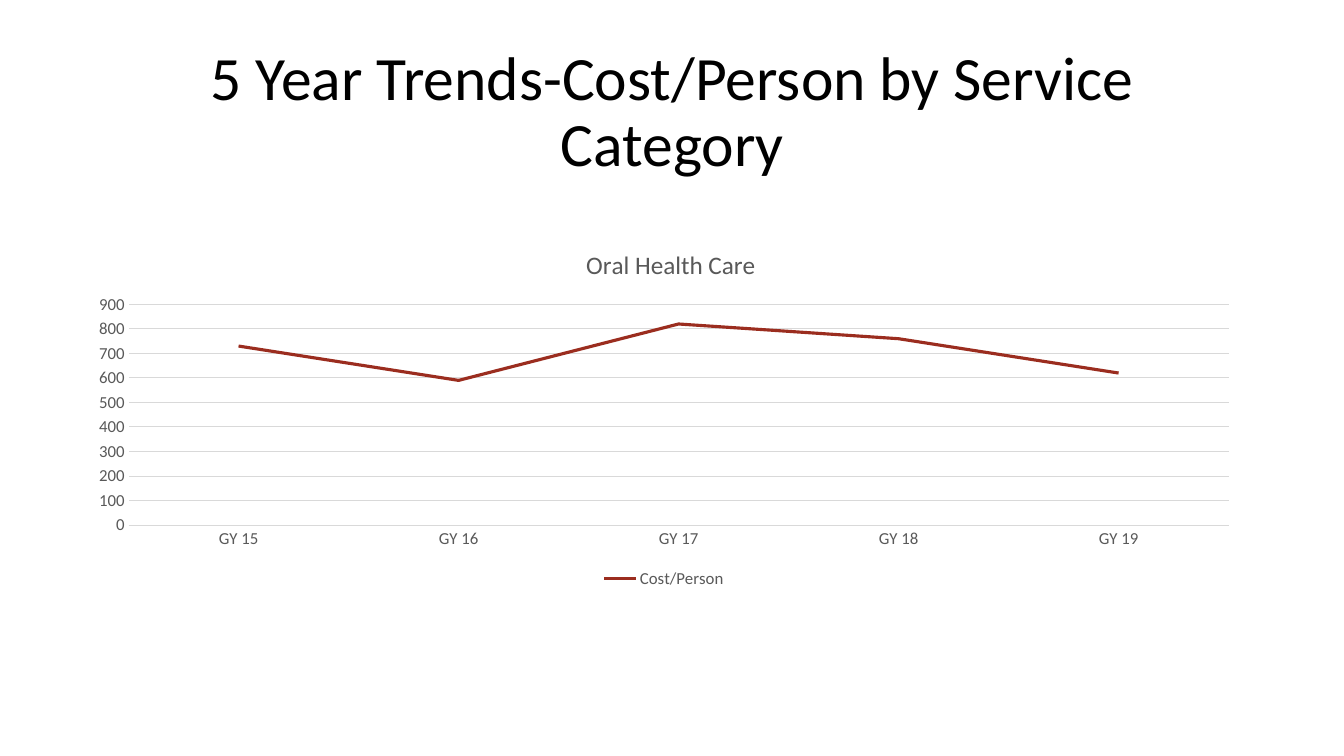
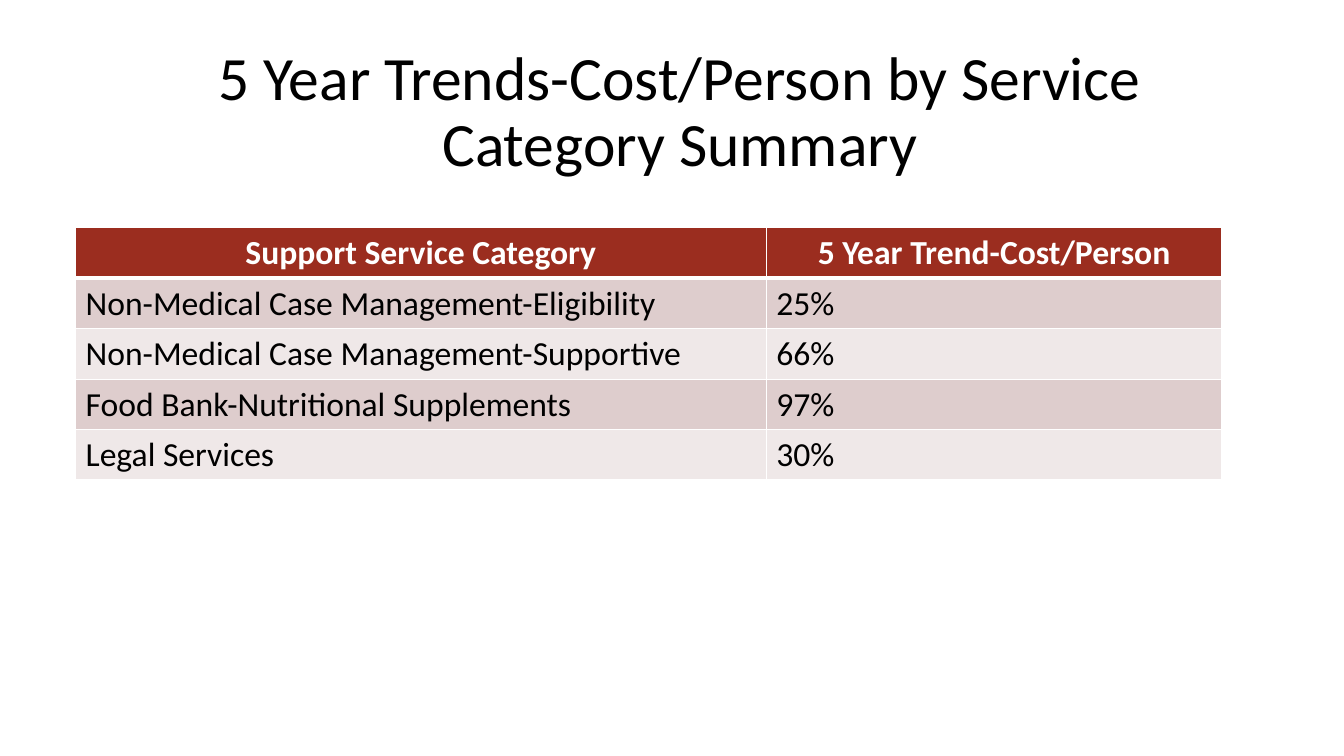
from dataclasses import dataclass

from lxml import etree
from pptx import Presentation
from pptx.chart.data import CategoryChartData
from pptx.dml.color import RGBColor
from pptx.enum.chart import XL_CHART_TYPE, XL_LEGEND_POSITION, XL_TICK_MARK
from pptx.enum.text import MSO_ANCHOR, PP_ALIGN
from pptx.oxml import parse_xml
from pptx.oxml.ns import nsdecls, qn
from pptx.util import Inches, Pt

LINE_CHART = XL_CHART_TYPE.LINE
LEGEND_BOTTOM = XL_LEGEND_POSITION.BOTTOM
NO_TICK = XL_TICK_MARK.NONE
MIDDLE = MSO_ANCHOR.MIDDLE
CENTER, LEFT = PP_ALIGN.CENTER, PP_ALIGN.LEFT


@dataclass(frozen=True)
class Theme:
    font: str = "Calibri"
    black: str = "000000"
    white: str = "FFFFFF"
    accent: str = "9B2D1F"
    bands: tuple = ("DECDCD", "EFE8E8")
    gray: str = "595959"
    grid: str = "D9D9D9"
    title_size: float = 44
    table_size: float = 24
    chart_title_size: float = 18
    chart_size: float = 12


THEME = Theme()


def rgb(color):
    return RGBColor.from_string(color)


def style_font(font, size, color, bold=False):
    font.name = THEME.font
    font.size = Pt(size)
    font.bold = bold
    font.color.rgb = rgb(color)


def style_line(line, color, width):
    line.color.rgb = rgb(color)
    line.width = Pt(width)


def add_title(slide, text, box):
    tf = slide.shapes.add_textbox(*map(Inches, box)).text_frame
    tf.word_wrap = True
    tf.vertical_anchor = MIDDLE
    p = tf.paragraphs[0]
    p.text = text
    p.alignment = CENTER
    p.line_spacing = 0.9
    style_font(p.runs[0].font, THEME.title_size, THEME.black)


def set_layout(parent, index, inner=False, **fractions):
    """Place a chart part by fractions of the chart's box."""
    for old in parent.findall(qn("c:layout")):
        parent.remove(old)
    layout = parse_xml(f"<c:layout {nsdecls('c')}><c:manualLayout/></c:layout>")
    settings = {"layoutTarget": "inner"} if inner else {}
    settings.update(xMode="edge", yMode="edge", **fractions)
    for name, value in settings.items():
        etree.SubElement(layout[0], qn(f"c:{name}")).set("val", str(value))
    parent.insert(index, layout)


def add_trend_chart(slide, heading, series_name, values, box):
    data = CategoryChartData()
    data.categories = values.keys()
    data.add_series(series_name, values.values())
    chart = slide.shapes.add_chart(LINE_CHART, *map(Inches, box), data).chart
    style_font(chart.font, THEME.chart_size, THEME.gray)

    chart.has_title = True
    p = chart.chart_title.text_frame.paragraphs[0]
    p.text = heading
    style_font(p.runs[0].font, THEME.chart_title_size, THEME.gray)
    space = chart._chartSpace
    set_layout(space.find(".//" + qn("c:title")), 1, x=0.43, y=0.04)
    set_layout(space.find(".//" + qn("c:plotArea")), 0, inner=True,
               x=0.045, y=0.21, w=0.935, h=0.605)

    chart.has_legend = True
    chart.legend.position = LEGEND_BOTTOM
    chart.legend.include_in_layout = False
    style_font(chart.legend.font, THEME.chart_size, THEME.gray)

    for axis in (chart.category_axis, chart.value_axis):
        axis.major_tick_mark = axis.minor_tick_mark = NO_TICK
        style_font(axis.tick_labels.font, THEME.chart_size, THEME.gray)
    style_line(chart.category_axis.format.line, THEME.grid, 0.75)
    value_axis = chart.value_axis
    value_axis.minimum_scale, value_axis.maximum_scale = 0, 900
    value_axis.major_unit = 100
    value_axis.format.line.fill.background()
    style_line(value_axis.major_gridlines.format.line, THEME.grid, 0.75)

    plot = chart.plots[0]
    plot.vary_by_categories = False
    series = plot.series[0]
    series.smooth = False
    style_line(series.format.line, THEME.accent, 2.25)


def set_borders(cell, bottom):
    tc_pr = cell._tc.get_or_add_tcPr()
    for side, width in (("L", 1), ("R", 1), ("T", 1), ("B", bottom)):
        tc_pr.append(parse_xml(
            f'<a:ln{side} {nsdecls("a")} w="{Pt(width)}"><a:solidFill>'
            f'<a:srgbClr val="{THEME.white}"/></a:solidFill></a:ln{side}>'))


def fill_cell(cell, text, fill, color, header):
    set_borders(cell, bottom=3 if header else 1)
    cell.fill.solid()
    cell.fill.fore_color.rgb = rgb(fill)
    p = cell.text_frame.paragraphs[0]
    p.text = text
    p.alignment = CENTER if header else LEFT
    style_font(p.runs[0].font, THEME.table_size, color, bold=header)


def add_summary_table(slide, rows, widths, box):
    table = slide.shapes.add_table(
        len(rows), len(widths), *map(Inches, box)).table
    for column, width in zip(table.columns, widths):
        column.width = Inches(width)
    for i, row in enumerate(rows):
        header = i == 0
        fill = THEME.accent if header else THEME.bands[(i - 1) % 2]
        color = THEME.white if header else THEME.black
        for j, text in enumerate(row):
            fill_cell(table.cell(i, j), text, fill, color, header)


def build_chart_slide(slide):
    add_title(slide, "5 Year Trends-Cost/Person by Service Category",
              (0.92, 0.4, 11.5, 1.45))
    costs = {"GY 15": 730, "GY 16": 590, "GY 17": 820, "GY 18": 760, "GY 19": 620}
    add_trend_chart(slide, "Oral Health Care", "Cost/Person", costs,
                    (0.75, 2.26, 11.67, 3.62))


def build_summary_slide(slide):
    add_title(slide, "5 Year Trends-Cost/Person by Service Category Summary",
              (0.92, 0.4, 11.65, 1.45))
    rows = [
        ("Support Service Category", "5 Year Trend-Cost/Person"),
        ("Non-Medical Case Management-Eligibility", "25%"),
        ("Non-Medical Case Management-Supportive", "66%"),
        ("Food Bank-Nutritional Supplements", "97%"),
        ("Legal Services", "30%"),
    ]
    add_summary_table(slide, rows, (6.85, 4.52), (0.75, 2.26, 11.37, 2.5))


def main():
    prs = Presentation()
    prs.slide_width, prs.slide_height = Inches(13.33), Inches(7.5)
    for build in (build_chart_slide, build_summary_slide):
        build(prs.slides.add_slide(prs.slide_layouts[6]))
    prs.save("out.pptx")


if __name__ == "__main__":
    main()
